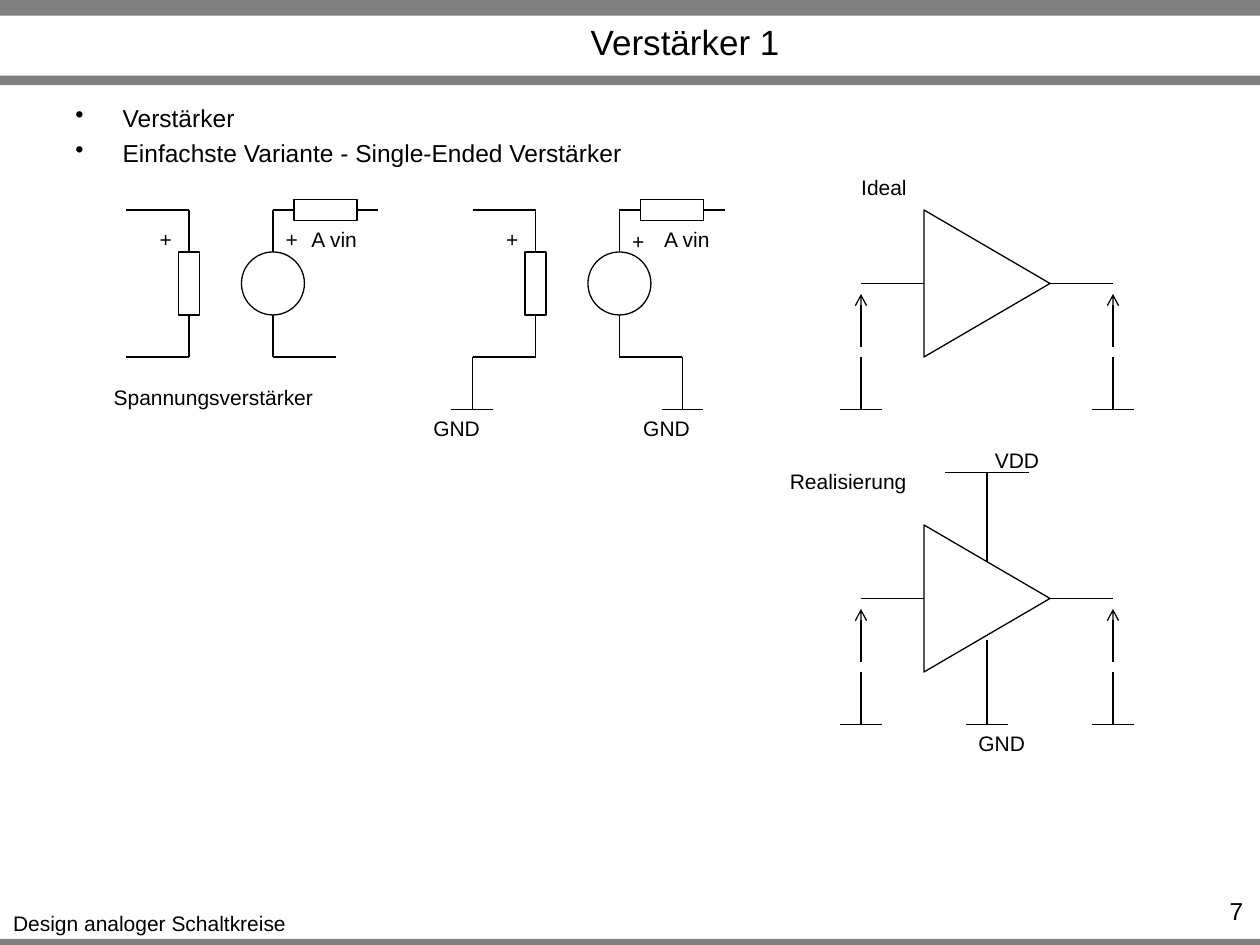
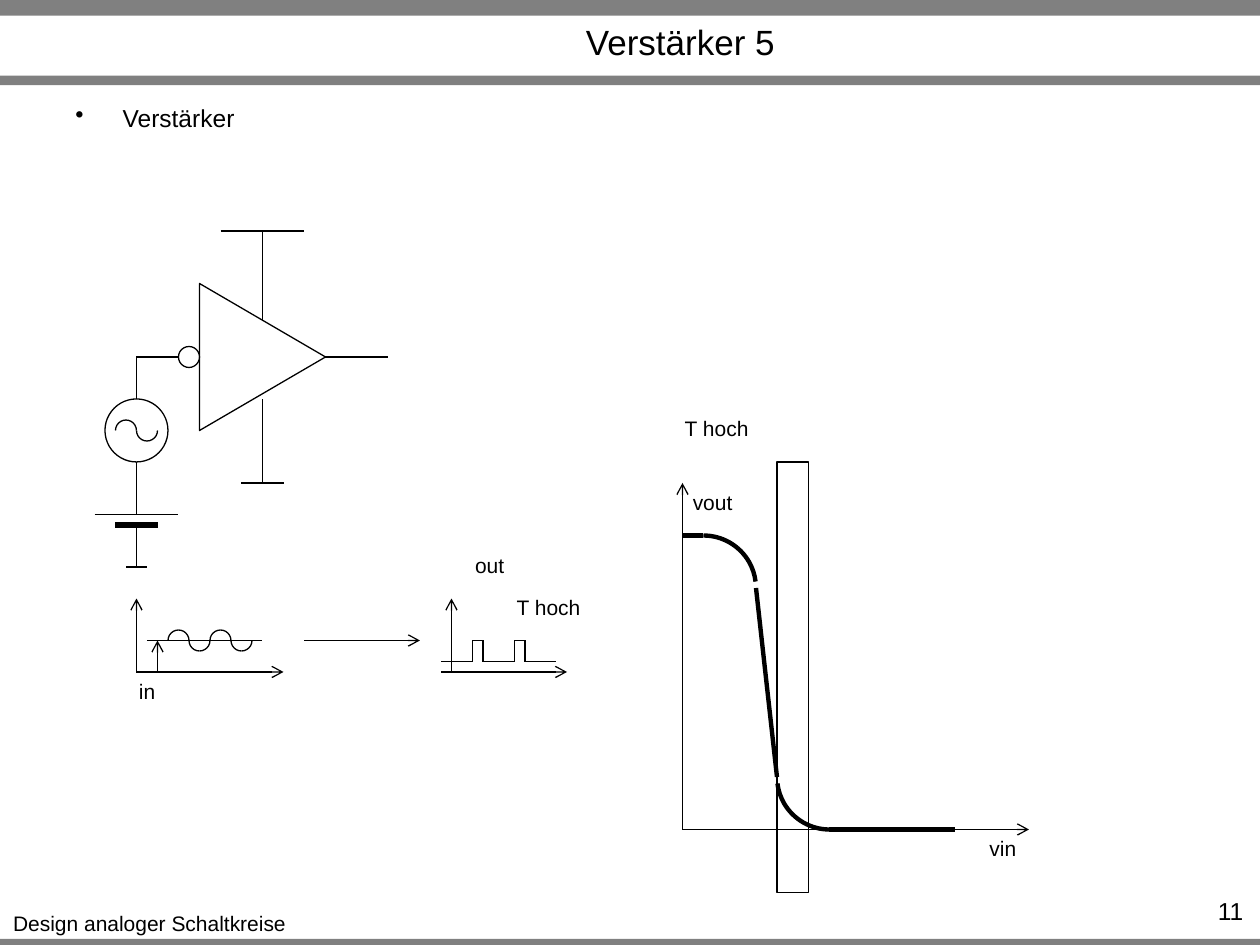
from pptx import Presentation
from pptx.dml.color import RGBColor
from pptx.enum.shapes import MSO_CONNECTOR, MSO_SHAPE
from pptx.enum.text import MSO_ANCHOR, PP_ALIGN
from pptx.oxml.ns import qn
from pptx.util import Pt
from lxml import etree

BLACK = RGBColor(0x00, 0x00, 0x00)
WHITE = RGBColor(0xFF, 0xFF, 0xFF)
GRAY = RGBColor(0x80, 0x80, 0x80)
FONT = "Arial"
THIN, BOLD = 0.75, 2.5

STRAIGHT = MSO_CONNECTOR.STRAIGHT
RECT, OVAL = MSO_SHAPE.RECTANGLE, MSO_SHAPE.OVAL
TRIANGLE, ARC = MSO_SHAPE.ISOSCELES_TRIANGLE, MSO_SHAPE.ARC
LEFT, CENTER, RIGHT = PP_ALIGN.LEFT, PP_ALIGN.CENTER, PP_ALIGN.RIGHT
TOP, MIDDLE = MSO_ANCHOR.TOP, MSO_ANCHOR.MIDDLE
TOP_SIDE, BOTTOM_SIDE = 0, 2


# Basic elements

def write(slide, text, left, top, width, height=21.6, size=12, align=CENTER,
          anchor=TOP, wrap=False, bullet=False):
    """Write text; each line becomes a paragraph."""
    frame = slide.shapes.add_textbox(
        Pt(left), Pt(top), Pt(width), Pt(height)).text_frame
    frame.word_wrap = wrap
    frame.vertical_anchor = anchor
    for i, line in enumerate(text.split("\n")):
        para = frame.add_paragraph() if i else frame.paragraphs[0]
        para.text = line
        para.alignment = align
        if i:
            para.space_before = Pt(3.2)
        if bullet:
            props = para._p.get_or_add_pPr()
            props.set("marL", str(Pt(27)))
            props.set("indent", str(-Pt(27)))
            etree.SubElement(props, qn("a:buChar"), char="•")
        para.font.name = FONT
        para.font.size = Pt(size)
        para.font.color.rgb = BLACK


def draw(slide, kind, left, top, width, height, fill=None, line=THIN, turn=0):
    shape = slide.shapes.add_shape(
        kind, Pt(left), Pt(top), Pt(width), Pt(height))
    shape.shadow.inherit = False
    shape.rotation = turn
    if fill is None:
        shape.fill.background()
    else:
        shape.fill.solid()
        shape.fill.fore_color.rgb = fill
    if line:
        shape.line.color.rgb = BLACK
        shape.line.width = Pt(line)
    else:
        shape.line.fill.background()
    return shape


def wire(slide, x1, y1, x2, y2, width=THIN, arrow=False):
    link = slide.shapes.add_connector(
        STRAIGHT, Pt(x1), Pt(y1), Pt(x2), Pt(y2))
    link.line.color.rgb = BLACK
    link.line.width = Pt(width)
    if arrow:
        etree.SubElement(link.line._get_or_add_ln(), qn("a:tailEnd"),
                         type="arrow")
    etree.SubElement(link._element.spPr, qn("a:effectLst"))
    return link


def trace(slide, *points):
    for start, end in zip(points, points[1:]):
        wire(slide, *start, *end)


def bar(slide, x, y, half=12, width=THIN):
    wire(slide, x - half, y, x + half, y, width)


def arc(slide, left, top, size, start, end, line=THIN, turn=0):
    shape = draw(slide, ARC, left, top, size, size, line=line, turn=turn)
    # Angles count 60000 to the degree, adjustments 100000 to the unit
    shape.adjustments[0] = start * 0.6
    shape.adjustments[1] = end * 0.6


# Circuit parts

def wave(slide, left, top):
    """One sine period from four quarter arcs."""
    for x, starts in ((left, (180, 270)), (left + 12, (0, 90))):
        for start in starts:
            arc(slide, x, top, 12, start, (start + 90) % 360)


def axes(slide, x, y, right, top):
    wire(slide, x, y, right, y, arrow=True)
    wire(slide, x, y, x, top, arrow=True)


def source(slide, x, y):
    draw(slide, OVAL, x - 18, y - 18, 36, 36)


def model(slide, x):
    """Input resistor, controlled source and output resistor."""
    inner, drive = x + 36, x + 84
    for y in (120, 204):
        wire(slide, x, y, inner, y)
    load = draw(slide, RECT, inner - 6, 144, 12, 36)
    wire(slide, inner, 120, inner, 144).end_connect(load, TOP_SIDE)
    wire(slide, inner, 180, inner, 204).begin_connect(load, BOTTOM_SIDE)
    source(slide, drive, 162)
    trace(slide, (drive, 144), (drive, 120), (drive + 60, 120))
    trace(slide, (drive, 180), (drive, 204), (drive + 36, 204))
    draw(slide, RECT, drive + 12, 114, 36, 12, fill=WHITE)


def amp(slide, x, y):
    """Amplifier with its output wire; x is its flat side, y its axis."""
    draw(slide, TRIANGLE, x - 6, y - 36, 84, 72, turn=90)
    wire(slide, x + 72, y, x + 108, y)


def ports(slide, x, y):
    """Input wire, and voltage arrows to ground at input and output."""
    wire(slide, x - 36, y, x, y)
    for port in (x - 36, x + 108):
        wire(slide, port, y + 42, port, y + 72)
        bar(slide, port, y + 72)
        wire(slide, port, y + 36, port, y + 6, arrow=True)


def supply(slide, x, y):
    mid = x + 36
    wire(slide, mid, y - 21, mid, y - 72)
    bar(slide, mid, y - 72, half=24)
    wire(slide, mid, y + 72, mid, y + 24)
    bar(slide, mid, y + 72)


# Shared page

def page(deck, title, points, number):
    slide = deck.slides.add_slide(deck.slide_layouts[6])
    for top, height in ((536.5, 3.5), (0, 9), (43.2, 5.5)):
        draw(slide, RECT, 0, top, 720, height, fill=GRAY, line=0)
    write(slide, "Design analoger Schaltkreise", 0, 516.5, 171)
    write(slide, title, 93.6, 10, 590.4, 27.5, size=20, anchor=MIDDLE,
          wrap=True)
    write(slide, points, 36, 55.5, 648, 35, size=14, align=LEFT, wrap=True,
          bullet=True)
    write(slide, number, 655, 508.5, 62.6, 17.5, size=14, align=RIGHT,
          wrap=True)
    return slide


def basics(deck):
    slide = page(deck, " Verstärker 1",
                 "Verstärker\nEinfachste Variante - Single-Ended Verstärker",
                 "7")
    # Voltage amplifier, floating and grounded
    for x in (72, 270):
        model(slide, x)
        write(slide, "+", x + 12, 126, 21.6)
    for x in (270, 390):
        wire(slide, x, 204, x, 234)
        bar(slide, x, 234)
        write(slide, "GND", x - 30, 234, 41.8)
    write(slide, "+", 156, 126, 21.6)
    write(slide, "+", 354, 127, 21.6)
    write(slide, "A vin", 170.5, 126, 41)
    write(slide, "A vin", 372, 126, 41)
    write(slide, " Spannungsverstärker ", 54, 216, 136)

    # Ideal amplifier and its realisation
    for y in (162, 342):
        amp(slide, 528, y)
        ports(slide, 528, y)
    supply(slide, 528, 342)
    write(slide, "Ideal", 485, 96, 40.3)
    write(slide, "Realisierung", 444, 264, 81.4)
    write(slide, "VDD", 561, 252, 40.3)
    write(slide, "GND", 551.5, 414, 41.8)


def limits(deck):
    slide = page(deck, "Verstärker 5", "Verstärker", "11")
    # Inverting amplifier
    trace(slide, (78, 228), (78, 204), (114, 204))
    amp(slide, 114, 204)
    supply(slide, 114, 204)
    draw(slide, OVAL, 102, 198, 12, 12, fill=WHITE)

    # Signal source and battery
    source(slide, 78, 246)
    wave(slide, 66, 240)
    wire(slide, 78, 264, 78, 294)
    bar(slide, 78, 294, half=24)
    bar(slide, 78, 300, width=3)
    wire(slide, 78, 324, 78, 300)
    bar(slide, 78, 324, half=6)

    # Input signal
    axes(slide, 78, 384, 162, 342)
    wire(slide, 84, 366, 150, 366)
    wire(slide, 90, 384, 90, 366, arrow=True)
    for x in (96, 120):
        wave(slide, x, 360)
    write(slide, "in", 72, 384, 24)
    wire(slide, 174, 366, 240, 366, arrow=True)

    # Output pulses
    axes(slide, 258, 384, 324, 342)
    for x in (252, 300):
        wire(slide, x, 384, x + 18, 384)
    steps = [(x + dx, y) for x in (270, 294)
             for dx, y in ((0, 378), (0, 366), (6, 366), (6, 378))]
    trace(slide, (252, 378), *steps, (318, 378))
    write(slide, "out", 264, 312, 31.7)
    write(slide, "T hoch", 288, 336, 51)

    # Transfer curve
    axes(slide, 390, 474, 588, 276)
    wire(slide, 390, 306, 402, 306, BOLD)
    arc(slide, 372, 306, 60, 270, 352.93, BOLD)
    wire(slide, 432, 336, 444, 444, BOLD)
    arc(slide, 444, 414, 60, 270, 352.93, BOLD, turn=180)
    wire(slide, 474, 474, 546, 474, BOLD)
    draw(slide, RECT, 444, 264, 18, 246)
    write(slide, "T hoch", 384, 234, 51)
    write(slide, "vout", 388.5, 276, 37.4)
    write(slide, "vin", 558, 474, 30.2)


def main():
    deck = Presentation()
    deck.slide_width, deck.slide_height = Pt(720), Pt(540)
    basics(deck)
    limits(deck)
    deck.save("out.pptx")


if __name__ == "__main__":
    main()
